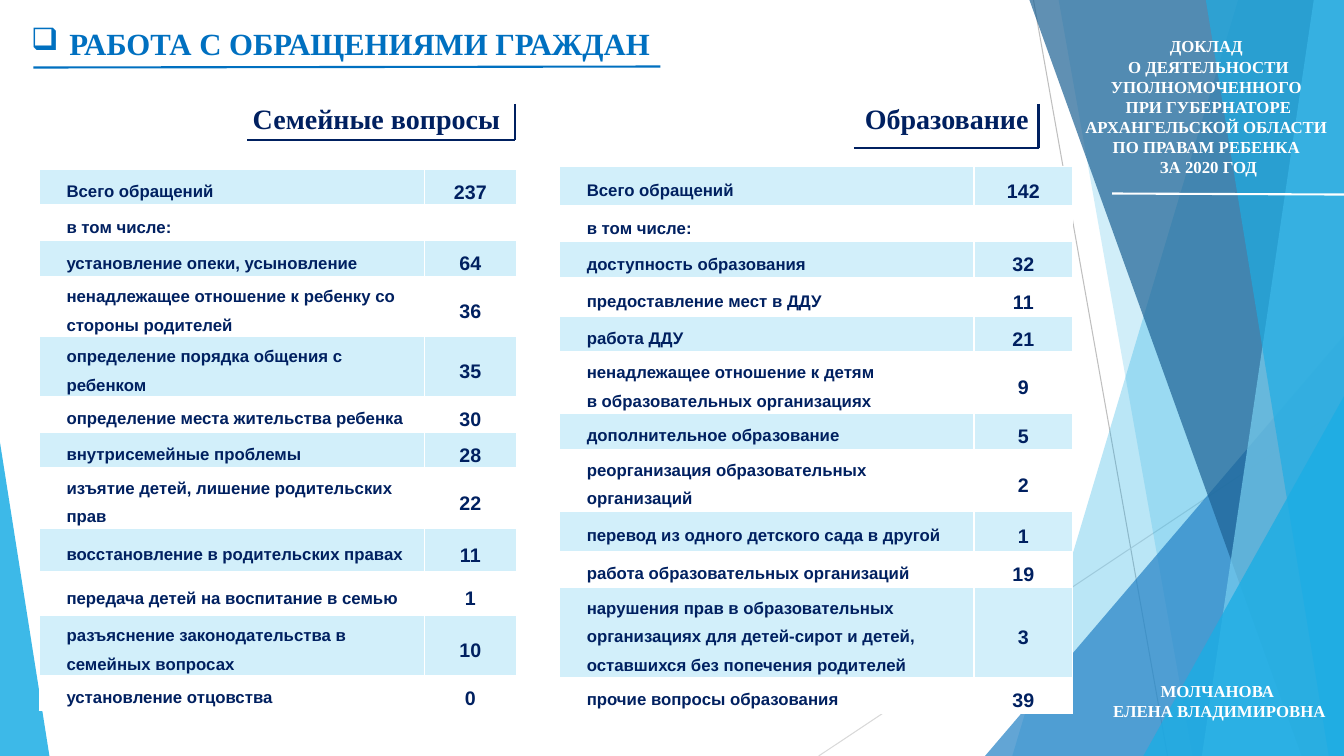
import copy
from dataclasses import dataclass

import lxml.etree
import pptx
import pptx.dml.color
import pptx.enum.shapes
import pptx.enum.text
import pptx.oxml.ns
import pptx.util

Inches = pptx.util.Inches
Align = pptx.enum.text.PP_ALIGN
Shape = pptx.enum.shapes.MSO_SHAPE
qn = pptx.oxml.ns.qn

WIDE, HIGH = 13.33, 7.5
SERIF, SANS = "Times New Roman", "Arial"
HEX = {"white": "FFFFFF", "navy": "002060", "blue": "0070C0", "band": "D2EFFA",
       "sky": "1CADE4", "mid": "2683C6", "deep": "1D6294", "pale": "77CEEF",
       "gray": "BFBFBF", "light": "D9D9D9"}


@dataclass
class Facet:
    """Panel reaching the right edge, with a slanted left side."""
    top: float
    foot: float
    color: str
    alpha: int


@dataclass
class Wedge:
    """Triangle standing on the bottom edge."""
    left: float
    top: float
    width: float
    tip: float
    color: str
    alpha: int


@dataclass
class Line:
    start: tuple[float, float]
    end: tuple[float, float]
    color: str
    width: float = 1.5


@dataclass
class Label:
    box: tuple[float, float, float, float]
    text: str
    size: int
    color: str
    align: Align = Align.CENTER
    wrap: bool = True
    bullet: str = ""


@dataclass
class Grid:
    left: float
    top: float
    cols: tuple[float, float]
    after: int
    rows: list[tuple[float, str, str]]


DECOR = [
    Line((10.25, 0), (11.58, HIGH), "gray", 0.75),
    Line((WIDE, 4.03), (8.12, HIGH), "light", 0.75),
    Facet(12.28, 10.04, "sky", 30),
    Facet(10.5, 11.83, "sky", 20),
    Wedge(9.77, 3.33, 3.56, 1, "mid", 72),
    Facet(10.21, 12.91, "deep", 70),
    Facet(13.03, 11.92, "pale", 70),
    Facet(11.96, 13.18, "sky", 65),
    Wedge(11.34, 3.93, 1.99, 1, "sky", 80),
    Wedge(0, 4.39, 0.49, 0, "sky", 85),
]
LABELS = [
    Label((10.64, 0.31, 2.69, 1.51),
          "ДОКЛАД \nО ДЕЯТЕЛЬНОСТИ УПОЛНОМОЧЕННОГО \nПРИ ГУБЕРНАТОРЕ "
          "АРХАНГЕЛЬСКОЙ ОБЛАСТИ \nПО ПРАВАМ РЕБЕНКА \nЗА 2020 ГОД", 12, "white"),
    Label((10.75, 6.7, 2.69, 0.5), "МОЛЧАНОВА \nЕЛЕНА ВЛАДИМИРОВНА", 12, "white"),
    Label((1.71, 0.96, 3.35, 0.44), "Семейные вопросы", 20, "navy", Align.RIGHT),
    Label((8.47, 0.96, 1.84, 0.44), "Образование", 20, "navy", wrap=False),
    Label((0.21, 0.01, 6.47, 0.66), "РАБОТА С ОБРАЩЕНИЯМИ ГРАЖДАН", 22, "blue",
          Align.LEFT, bullet="❑"),
]
RULES = [
    Line((11.03, 1.92), (WIDE, 1.93), "white"),
    Line((0.33, 0.67), (6.55, 0.66), "blue"),
    Line((8.47, 1.47), (10.3, 1.47), "navy"),
    Line((10.3, 1.03), (10.3, 1.47), "navy"),
    Line((2.45, 1.39), (5.11, 1.39), "navy"),
    Line((5.11, 1.03), (5.11, 1.39), "navy"),
]
GRIDS = [
    Grid(0.39, 1.68, (3.82, 0.91), 0, [
        (0.35, "Всего обращений", "237"),
        (0.36, "в том числе:", ""),
        (0.35, "установление опеки, усыновление", "64"),
        (0.6, "ненадлежащее отношение к ребенку со стороны родителей", "36"),
        (0.59, "определение порядка общения с ребенком", "35"),
        (0.36, "определение места жительства ребенка", "30"),
        (0.35, "внутрисемейные проблемы", "28"),
        (0.6, "изъятие детей, лишение родительских прав", "22"),
        (0.43, "восстановление в родительских правах", "11"),
        (0.44, "передача детей на воспитание в семью", "1"),
        (0.59, "разъяснение законодательства в семейных вопросах", "10"),
        (0.35, "установление отцовства", "0")]),
    Grid(5.55, 1.65, (4.11, 0.98), 6, [
        (0.39, "Всего обращений", "142"),
        (0.36, "в том числе:", ""),
        (0.35, "доступность образования", "32"),
        (0.39, "предоставление мест в ДДУ", "11"),
        (0.35, "работа ДДУ", "21"),
        (0.61, "ненадлежащее отношение к детям \nв образовательных организациях", "9"),
        (0.36, "дополнительное образование", "5"),
        (0.61, "реорганизация образовательных организаций", "2"),
        (0.4, "перевод из одного детского сада в другой", "1"),
        (0.36, "работа образовательных организаций", "19"),
        (0.89, "нарушения прав в образовательных организациях для детей-сирот и детей, "
               "оставшихся без попечения родителей", "3"),
        (0.36, "прочие вопросы образования", "39")]),
]


def tint(name: str) -> pptx.dml.color.RGBColor:
    return pptx.dml.color.RGBColor.from_string(HEX[name])


def apply(item, form: dict) -> None:
    for key, value in form.items():
        setattr(item, key, value)


def write(para, text: str, font: str, size: int, color: str, form: dict) -> None:
    para.text = text
    apply(para, form)
    for run in para.runs:
        apply(run.font, {"name": font, "size": pptx.util.Pt(size), "bold": True})
        run.font.color.rgb = tint(color)
    # Line breaks take the size of the text around them
    for gap in para._p.findall(qn("a:br")):
        gap.append(copy.deepcopy(para.runs[0].font._element))


def indent(para, left: float, first: float = 0) -> None:
    props = para._p.get_or_add_pPr()
    props.set("marL", str(Inches(left)))
    props.set("indent", str(Inches(first)))


def paint(shape, color: str, alpha: int) -> None:
    shape.shadow.inherit = False
    shape.fill.solid()
    shape.fill.fore_color.rgb = tint(color)
    shape.line.fill.background()
    tone = shape._element.spPr.find(f"{qn('a:solidFill')}/{qn('a:srgbClr')}")
    lxml.etree.SubElement(tone, qn("a:alpha")).set("val", str(alpha * 1000))


def draw_facet(shapes, facet: Facet) -> None:
    edge = [(WIDE, 0), (WIDE, HIGH), (facet.foot, HIGH)]
    pen = shapes.build_freeform(Inches(facet.top), 0)
    pen.add_line_segments([(Inches(x), Inches(y)) for x, y in edge], close=True)
    paint(pen.convert_to_shape(), facet.color, facet.alpha)


def draw_wedge(shapes, wedge: Wedge) -> None:
    box = (wedge.left, wedge.top, wedge.width, HIGH - wedge.top)
    shape = shapes.add_shape(Shape.ISOSCELES_TRIANGLE, *map(Inches, box))
    shape.adjustments[0] = wedge.tip
    paint(shape, wedge.color, wedge.alpha)


def draw_line(shapes, line: Line) -> None:
    kind = pptx.enum.shapes.MSO_CONNECTOR.STRAIGHT
    link = shapes.add_connector(kind, *map(Inches, line.start + line.end))
    link.line.color.rgb = tint(line.color)
    link.line.width = pptx.util.Pt(line.width)
    lxml.etree.SubElement(link._element.spPr, qn("a:effectLst"))


def draw_label(shapes, label: Label) -> None:
    frame = shapes.add_textbox(*map(Inches, label.box)).text_frame
    apply(frame, {"word_wrap": label.wrap,
                  "auto_size": pptx.enum.text.MSO_AUTO_SIZE.SHAPE_TO_FIT_TEXT})
    para = frame.paragraphs[0]
    form = {"alignment": label.align, "line_spacing": 1.5 if label.bullet else 1.0}
    write(para, label.text, SERIF, label.size, label.color, form)
    if label.bullet:
        indent(para, 0.38, -0.38)
        mark = lxml.etree.SubElement(para._p.get_or_add_pPr(), qn("a:buChar"))
        mark.set("char", label.bullet)


def draw_grid(shapes, grid: Grid) -> None:
    size = (sum(grid.cols), sum(row[0] for row in grid.rows))
    frame = shapes.add_table(len(grid.rows), 2, *map(Inches, (grid.left, grid.top) + size))
    table = frame.table
    for col, width in zip(table.columns, grid.cols):
        col.width = Inches(width)
    form = {"margin_left": Inches(0.07), "margin_right": Inches(0.07), "margin_top": 0,
            "margin_bottom": 0, "vertical_anchor": pptx.enum.text.MSO_ANCHOR.MIDDLE}
    for i, (height, *texts) in enumerate(grid.rows):
        table.rows[i].height = Inches(height)
        for j, text in enumerate(texts):
            cell = table.cell(i, j)
            apply(cell, form)
            cell.fill.solid()
            cell.fill.fore_color.rgb = tint("white" if i % 2 else "band")
            if not text:
                continue
            para = cell.text_frame.paragraphs[0]
            write(para, text, SANS, 14 if j else 12, "navy",
                  {"alignment": Align.CENTER if j else Align.LEFT,
                   "line_spacing": 1.5, "space_after": pptx.util.Pt(grid.after)})
            if j == 0:
                indent(para, 0.2)


def main() -> None:
    deck = pptx.Presentation()
    apply(deck, {"slide_width": Inches(WIDE), "slide_height": Inches(HIGH)})
    shapes = deck.slides.add_slide(deck.slide_layouts[6]).shapes
    tools = {Facet: draw_facet, Wedge: draw_wedge, Line: draw_line,
             Label: draw_label, Grid: draw_grid}
    # Backdrop first, then tables, text and rules
    for item in DECOR + GRIDS + LABELS + RULES:
        tools[type(item)](shapes, item)
    deck.save("out.pptx")


if __name__ == "__main__":
    main()
